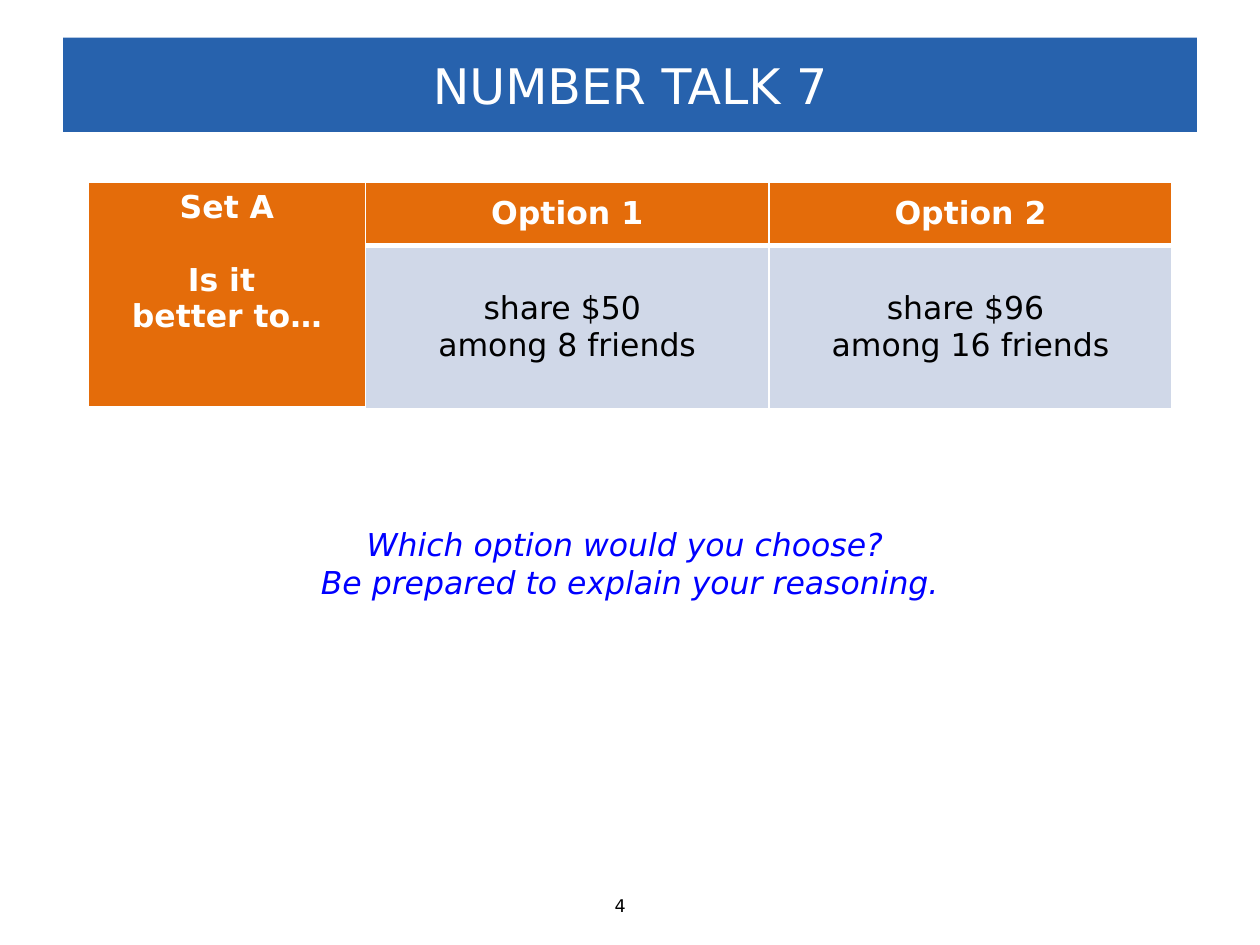
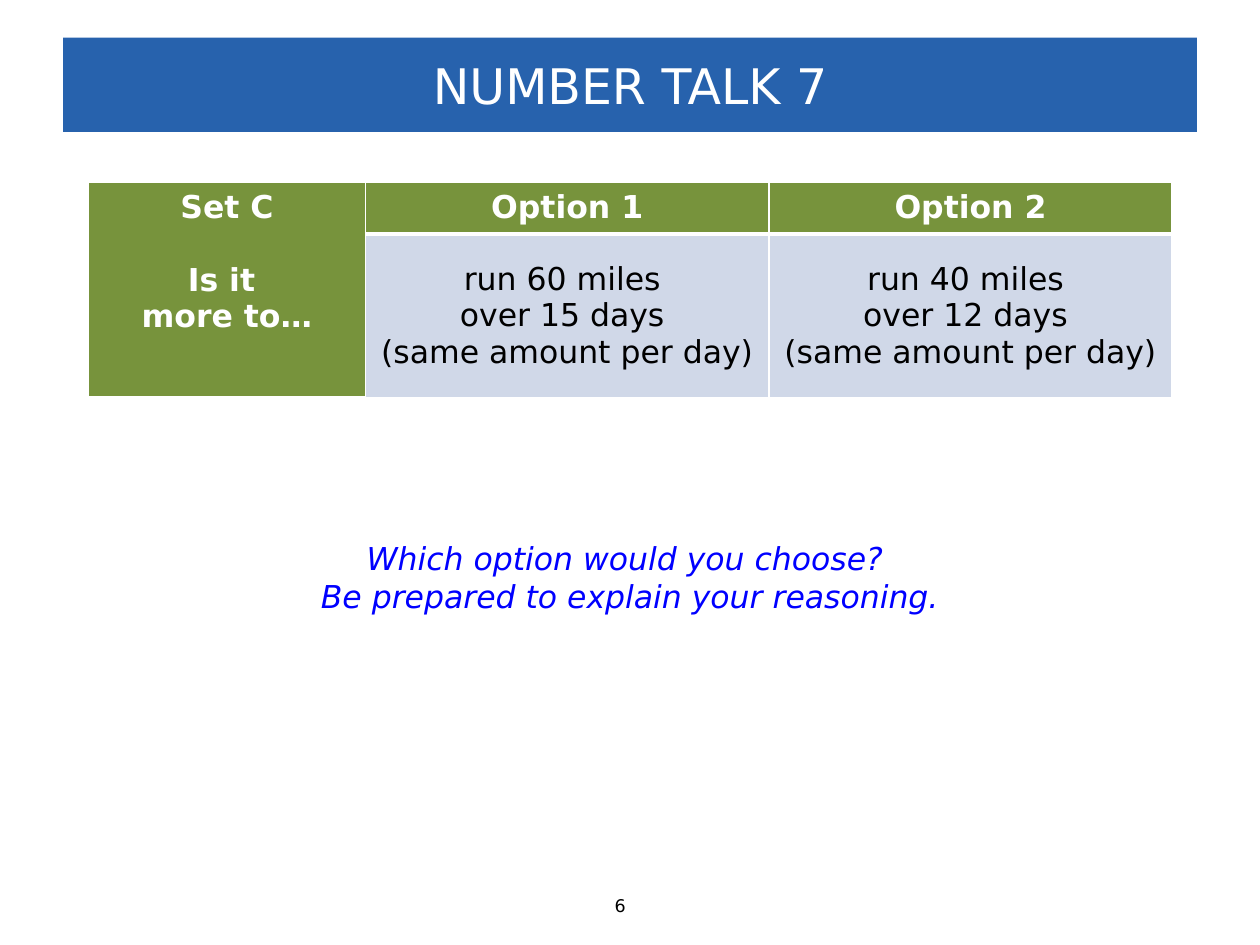
from lxml.etree import SubElement
from pptx import Presentation
from pptx.dml.color import RGBColor
from pptx.enum.text import MSO_ANCHOR, MSO_AUTO_SIZE, PP_ALIGN
from pptx.oxml.ns import qn
from pptx.util import Cm, Pt

TITLE = "NUMBER TALK 7"
PROMPT = ["Which option would you choose? ", "Be prepared to explain your reasoning."]
TALKS = [
    {
        "number": "4",
        "accent": "E46C0A",
        "question": ["Set A", "Is it ", "better to…"],
        "options": [
            ["share $50 ", "among 8 friends"],
            ["share $96 ", "among 16 friends"],
        ],
        "rows": [1.27, 3.05],
        "header_anchor": MSO_ANCHOR.MIDDLE,
        "prompt_top": 10.46,
    },
    {
        "number": "6",
        "accent": "77933C",
        "question": ["Set C", "Is it ", "more to…"],
        "options": [
            ["run 60 miles ", "over 15 days ", "(same amount per day)"],
            ["run 40 miles ", "over 12 days ", "(same amount per day)"],
        ],
        "rows": [1.04, 3.3],
        "header_anchor": MSO_ANCHOR.TOP,
        "prompt_top": 10.74,
    },
]

FONT = "DejaVu Sans"
WHITE, BLACK, BLUE = "FFFFFF", "000000", "0000FF"
BAND, OPTION_FILL = "2762AD", "D0D8E8"
COLUMNS = [5.59, 8.13, 8.13]
TABLE_LEFT, TABLE_TOP = 1.78, 3.68
BLANK_LINE = Pt(21)


def rgb(color):
    return RGBColor.from_string(color)


def write(tf, lines, size, color, align=PP_ALIGN.CENTER, bold=False, italic=False):
    tf.text = "\n".join(lines)
    for p in tf.paragraphs:
        p.alignment = align
        for r in p.runs:
            r.font.name = FONT
            r.font.size = Pt(size)
            r.font.bold = bold
            r.font.italic = italic
            r.font.color.rgb = rgb(color)


def set_borders(cell, bottom):
    """Draw white borders of 1 pt, with the bottom one as wide as given."""
    tc_pr = cell._tc.get_or_add_tcPr()
    for side, width in (("L", 1), ("R", 1), ("T", 1), ("B", bottom)):
        ln = SubElement(tc_pr, qn(f"a:ln{side}"), w=str(Pt(width)))
        fill = SubElement(ln, qn("a:solidFill"))
        SubElement(fill, qn("a:srgbClr"), val=WHITE)


def format_cell(cell, lines, fill, color, anchor, bold=False, bottom=1):
    write(cell.text_frame, lines, 18, color, bold=bold)
    cell.vertical_anchor = anchor
    set_borders(cell, bottom)
    cell.fill.solid()
    cell.fill.fore_color.rgb = rgb(fill)


def add_title(slide):
    title = slide.shapes.title
    title.left, title.top = Cm(1.27), Cm(0.76)
    title.width, title.height = Cm(22.86), Cm(1.9)
    title.fill.solid()
    title.fill.fore_color.rgb = rgb(BAND)
    tf = title.text_frame
    tf.auto_size = MSO_AUTO_SIZE.NONE
    tf.vertical_anchor = MSO_ANCHOR.MIDDLE
    write(tf, [TITLE], 28, WHITE)


def add_options_table(slide, talk):
    rows = talk["rows"]
    table = slide.shapes.add_table(
        len(rows), len(COLUMNS), Cm(TABLE_LEFT), Cm(TABLE_TOP),
        Cm(sum(COLUMNS)), Cm(sum(rows))).table
    for column, width in zip(table.columns, COLUMNS):
        column.width = Cm(width)
    for row, height in zip(table.rows, rows):
        row.height = Cm(height)

    accent = talk["accent"]
    question = table.cell(0, 0)
    question.merge(table.cell(1, 0))
    format_cell(question, talk["question"], accent, WHITE, MSO_ANCHOR.TOP, True, 3)
    question.text_frame.paragraphs[1].space_before = BLANK_LINE
    for i, lines in enumerate(talk["options"], start=1):
        format_cell(table.cell(0, i), [f"Option {i}"], accent, WHITE,
                    talk["header_anchor"], True, 3)
        format_cell(table.cell(1, i), lines, OPTION_FILL, BLACK, MSO_ANCHOR.MIDDLE)


def add_prompt(slide, top):
    tf = slide.shapes.add_textbox(Cm(6.2), Cm(top), Cm(13), Cm(1.8)).text_frame
    tf.word_wrap = True
    write(tf, PROMPT, 18, BLUE, italic=True)


def add_number(slide, number):
    tf = slide.shapes.add_textbox(Cm(12.14), Cm(17.91), Cm(1.12), Cm(0.69)).text_frame
    write(tf, [number], 10, BLACK, align=PP_ALIGN.LEFT)


def main():
    prs = Presentation()
    prs.slide_width, prs.slide_height = Cm(25.4), Cm(19.05)
    for talk in TALKS:
        slide = prs.slides.add_slide(prs.slide_layouts.get_by_name("Title Only"))
        add_number(slide, talk["number"])
        add_title(slide)
        add_prompt(slide, talk["prompt_top"])
        add_options_table(slide, talk)
    prs.save("out.pptx")


if __name__ == "__main__":
    main()
